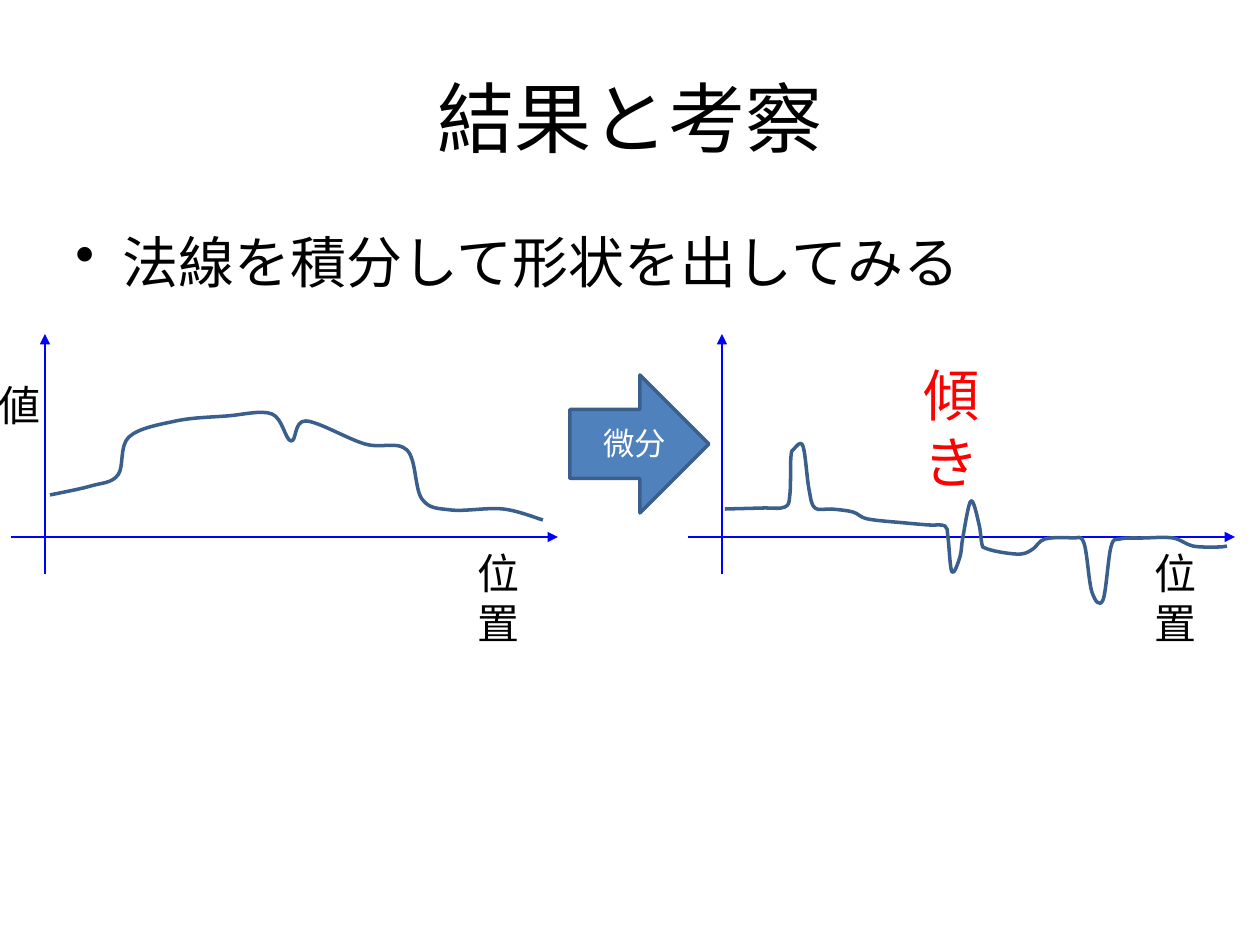
import pptx
import pptx.util
import pptx.dml.color
import pptx.enum.shapes
import pptx.enum.text
import pptx.oxml.ns
import pptx.oxml.xmlchemy
from dataclasses import dataclass

SCALE = 914400 / 126  # EMU in one px
FINE = 10  # curve steps in one px
SHAPES = pptx.enum.shapes
TEXT = pptx.enum.text


@dataclass(frozen=True)
class Theme:
    font: str = "Calibri"
    ink: str = "000000"
    axis: str = "0000FF"
    curve: str = "3A5F8C"
    fill: str = "4F81BD"
    light: str = "FFFFFF"
    alert: str = "FF0000"
    title: int = 44
    body: int = 32
    label: int = 24
    small: int = 18
    thin: float = 1.5
    thick: float = 2


THEME = Theme()

HEIGHT = [
    (50, 495), (91, 486), (118, 475), (129, 437), (176, 421), (227, 416),
    (272, 414), (291, 441), (306, 421), (365, 444), (407, 450), (422, 499),
    (451, 510), (503, 509), (543, 520),
]
SLOPE = [
    (725, 509), (762, 508), (785, 507), (790, 494), (791, 457), (794, 449),
    (803, 446), (809, 489), (815, 508), (832, 509), (853, 512), (868, 519),
    (906, 523), (929, 525), (945, 526), (948, 537), (952, 572), (960, 557),
    (963, 537), (971, 501), (979, 524), (982, 544), (985, 548), (1000, 552),
    (1021, 554), (1033, 549), (1045, 539), (1072, 538), (1084, 543),
    (1092, 592), (1103, 600), (1111, 547), (1120, 539), (1144, 538),
    (1173, 538), (1193, 546), (1218, 547), (1227, 546),
]


def px(n):
    return pptx.util.Emu(round(n * SCALE))


def rgb(code):
    return pptx.dml.color.RGBColor.from_string(code)


def node(tag, **attrs):
    item = pptx.oxml.xmlchemy.OxmlElement(tag)
    for key, value in attrs.items():
        item.set(key, value)
    return item


def stroke(item, color, width):
    item.line.color.rgb = rgb(color)
    item.line.width = pptx.util.Pt(width)


def style(para, size, color):
    para.font.name = THEME.font
    para.font.size = pptx.util.Pt(size)
    para.font.color.rgb = rgb(color)


def title(slide, text):
    box = slide.shapes.title
    box.left, box.top, box.width, box.height = map(px, (63, 38, 1134, 157))
    frame = box.text_frame
    frame.text = text
    frame.vertical_anchor = TEXT.MSO_ANCHOR.MIDDLE
    para = frame.paragraphs[0]
    para.alignment = TEXT.PP_ALIGN.CENTER
    style(para, THEME.title, THEME.ink)


def label(slide, text, area, size, color=THEME.ink, wrap=True, mark=None):
    box = slide.shapes.add_textbox(*map(px, area))
    frame = box.text_frame
    frame.word_wrap = wrap
    frame.text = text
    para = frame.paragraphs[0]
    if mark:
        props = para._p.get_or_add_pPr()
        props.set("marL", str(px(47)))
        props.set("indent", str(px(-47)))
        props.append(node("a:buChar", char=mark))
    style(para, size, color)


def axis(slide, start, end):
    line = slide.shapes.add_connector(
        SHAPES.MSO_CONNECTOR.STRAIGHT, *map(px, start + end))
    stroke(line, THEME.axis, THEME.thin)
    props = line._element.spPr
    props.find(pptx.oxml.ns.qn("a:ln")).append(
        node("a:tailEnd", type="triangle"))
    props.append(node("a:effectLst"))


def curve(slide, knots):
    """Draw a smooth open curve through the knots."""
    knots = [(x * FINE, y * FINE) for x, y in knots]
    ends = [knots[0], *knots, knots[-1]]
    points = []
    for a, b, c, d in zip(ends, ends[1:], ends[2:], ends[3:]):
        points.append(tuple(q + (r - p) / 6 for p, q, r in zip(a, b, c)))
        points.append(tuple(r - (s - q) / 6 for q, r, s in zip(b, c, d)))
        points.append(c)
    pen = slide.shapes.build_freeform(*knots[0], scale=SCALE / FINE)
    pen.add_line_segments(points, close=False)
    shape = pen.convert_to_shape()
    shape.shadow.inherit = False
    shape.fill.background()
    stroke(shape, THEME.curve, THEME.thick)
    # Each three line segments hold one Bezier: two handles and an end.
    lines = list(shape._element.iter(pptx.oxml.ns.qn("a:lnTo")))
    for i in range(0, len(lines), 3):
        bend = node("a:cubicBezTo")
        lines[i].addprevious(bend)
        for line in lines[i:i + 3]:
            bend.append(line[0])
            line.getparent().remove(line)


def graph(slide, left, knots):
    axis(slide, (left + 34, 574), (left + 34, 334))
    axis(slide, (left, 537), (left + 547, 537))
    label(slide, "位置", (left + 454, 541, 55, 43), THEME.label)
    curve(slide, knots)


def arrow(slide, area):
    shape = slide.shapes.add_shape(
        SHAPES.MSO_SHAPE.RIGHT_ARROW, *map(px, area))
    shape.shadow.inherit = False
    shape.fill.solid()
    shape.fill.fore_color.rgb = rgb(THEME.fill)
    stroke(shape, THEME.curve, THEME.thick)


def main():
    deck = pptx.Presentation()
    deck.slide_width, deck.slide_height = px(1260), px(945)
    slide = deck.slides.add_slide(deck.slide_layouts[5])
    title(slide, "結果と考察")
    label(slide, "法線を積分して形状を出してみる", (63, 221, 1134, 624),
          THEME.body, mark="•")
    graph(slide, 688, SLOPE)
    graph(slide, 11, HEIGHT)
    label(slide, "値", (-14, 373, 34, 43), THEME.label)
    arrow(slide, (570, 375, 139, 138))
    label(slide, "微分", (591, 418, 89, 50), THEME.small, THEME.light, False)
    label(slide, "傾き", (911, 354, 130, 81), THEME.body, THEME.alert)
    deck.save("out.pptx")


if __name__ == "__main__":
    main()
